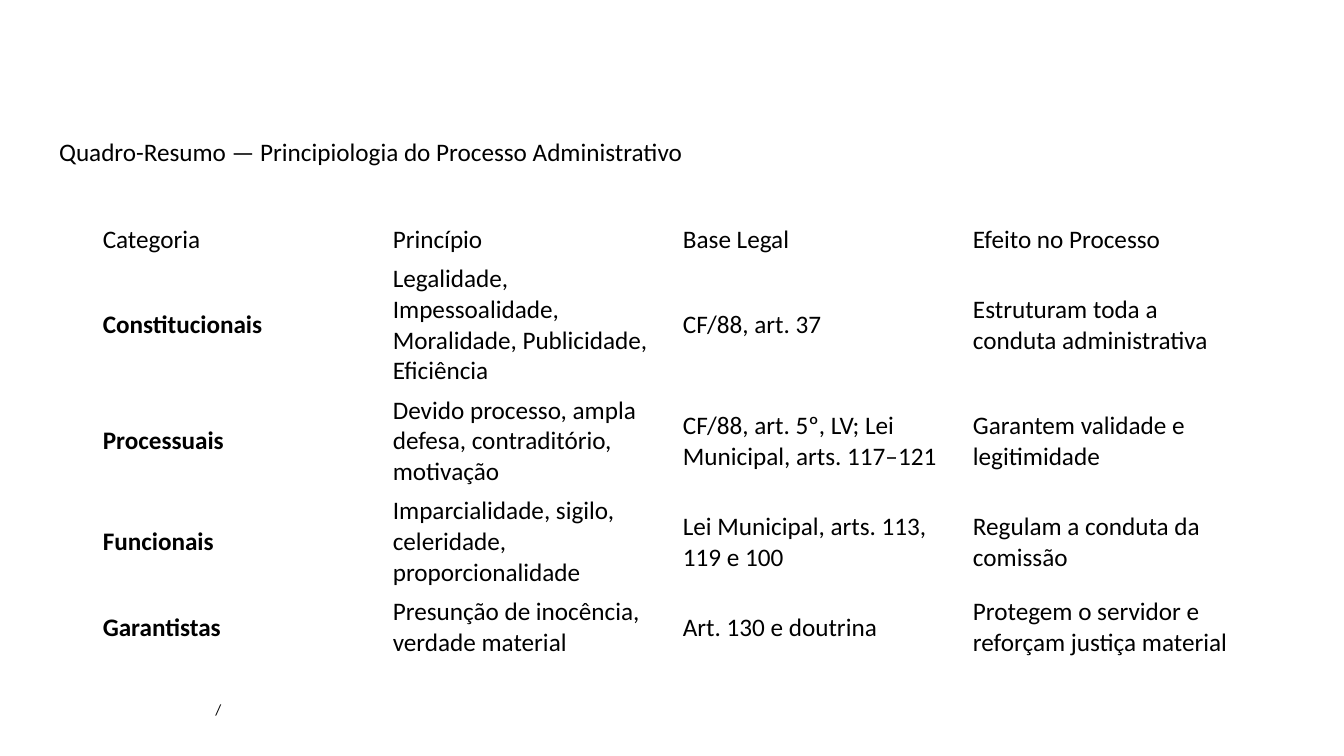
from dataclasses import dataclass

from pptx import Presentation
from pptx.dml.color import RGBColor
from pptx.enum.text import MSO_ANCHOR, MSO_AUTO_SIZE
from pptx.util import Cm, Pt

MIDDLE = MSO_ANCHOR.MIDDLE
GROW = MSO_AUTO_SIZE.SHAPE_TO_FIT_TEXT
COLORS = {"text": "000000"}
FONT_NAME = "Calibri"
BODY_SIZE = 18
FOOTER_SIZE = 11

TABLE_LEFT, TABLE_TOP = 2.34, 5.54
COLUMN_WIDTH = 7.31
LINE_HEIGHT, ROW_PADDING = 0.77, 0.23
CELL_FORMAT = {
    "vertical_anchor": MIDDLE,
    "margin_left": Cm(0.25),
    "margin_right": Cm(0.25),
    "margin_top": Cm(0.1),
    "margin_bottom": Cm(0.1),
}


@dataclass
class Label:
    text: str
    left: float
    top: float
    width: float
    height: float
    size: int


@dataclass
class SummaryRow:
    category: str
    principle: str
    legal_basis: str
    effect: str
    line_count: int
    bold_category: bool = True

    def texts(self) -> list[str]:
        return [self.category, self.principle, self.legal_basis, self.effect]


LABELS = [
    Label("/", 5.18, 17.53, 23.5, 0.74, FOOTER_SIZE),
    Label("Quadro-Resumo — Principiologia do Processo Administrativo",
          1.24, 3.3, 32.31, 1.02, BODY_SIZE),
]

SUMMARY_ROWS = [
    SummaryRow("Categoria", "Princípio", "Base Legal", "Efeito no Processo",
               1, bold_category=False),
    SummaryRow("Constitucionais",
               "Legalidade, Impessoalidade, Moralidade, Publicidade, Eficiência",
               "CF/88, art. 37",
               "Estruturam toda a conduta administrativa", 4),
    SummaryRow("Processuais",
               "Devido processo, ampla defesa, contraditório, motivação",
               "CF/88, art. 5º, LV; Lei Municipal, arts. 117–121",
               "Garantem validade e legitimidade", 3),
    SummaryRow("Funcionais",
               "Imparcialidade, sigilo, celeridade, proporcionalidade",
               "Lei Municipal, arts. 113, 119 e 100",
               "Regulam a conduta da comissão", 3),
    SummaryRow("Garantistas",
               "Presunção de inocência, verdade material",
               "Art. 130 e doutrina",
               "Protegem o servidor e reforçam justiça material", 2),
]


def apply_format(target, values: dict) -> None:
    for name, value in values.items():
        setattr(target, name, value)


def write_text(text_frame, text: str, size: int, bold: bool = False) -> None:
    paragraph = text_frame.paragraphs[0]
    run = paragraph.add_run()
    run.text = text
    apply_format(run.font, {"name": FONT_NAME, "size": Pt(size), "bold": bold})
    run.font.color.rgb = RGBColor.from_string(COLORS["text"])


def add_label(slide, label: Label) -> None:
    shape = slide.shapes.add_textbox(
        Cm(label.left), Cm(label.top), Cm(label.width), Cm(label.height))
    apply_format(shape.text_frame, {"word_wrap": True, "auto_size": GROW})
    write_text(shape.text_frame, label.text, label.size)


def add_summary_table(slide, rows: list[SummaryRow]) -> None:
    column_count = len(rows[0].texts())
    heights = [LINE_HEIGHT * row.line_count + ROW_PADDING for row in rows]
    table = slide.shapes.add_table(
        len(rows), column_count, Cm(TABLE_LEFT), Cm(TABLE_TOP),
        Cm(COLUMN_WIDTH * column_count), Cm(sum(heights))).table
    apply_format(table, {"first_row": False, "horz_banding": False})
    for column in table.columns:
        column.width = Cm(COLUMN_WIDTH)
    for row_index, row in enumerate(rows):
        table.rows[row_index].height = Cm(heights[row_index])
        for column_index, text in enumerate(row.texts()):
            cell = table.cell(row_index, column_index)
            cell.fill.background()
            apply_format(cell, CELL_FORMAT)
            bold = row.bold_category and column_index == 0
            write_text(cell.text_frame, text, BODY_SIZE, bold)


def main() -> None:
    presentation = Presentation()
    presentation.slide_width = Cm(33.87)
    presentation.slide_height = Cm(19.05)
    slide = presentation.slides.add_slide(presentation.slide_layouts[6])
    for label in LABELS:
        add_label(slide, label)
    add_summary_table(slide, SUMMARY_ROWS)
    presentation.save("out.pptx")


if __name__ == "__main__":
    main()
